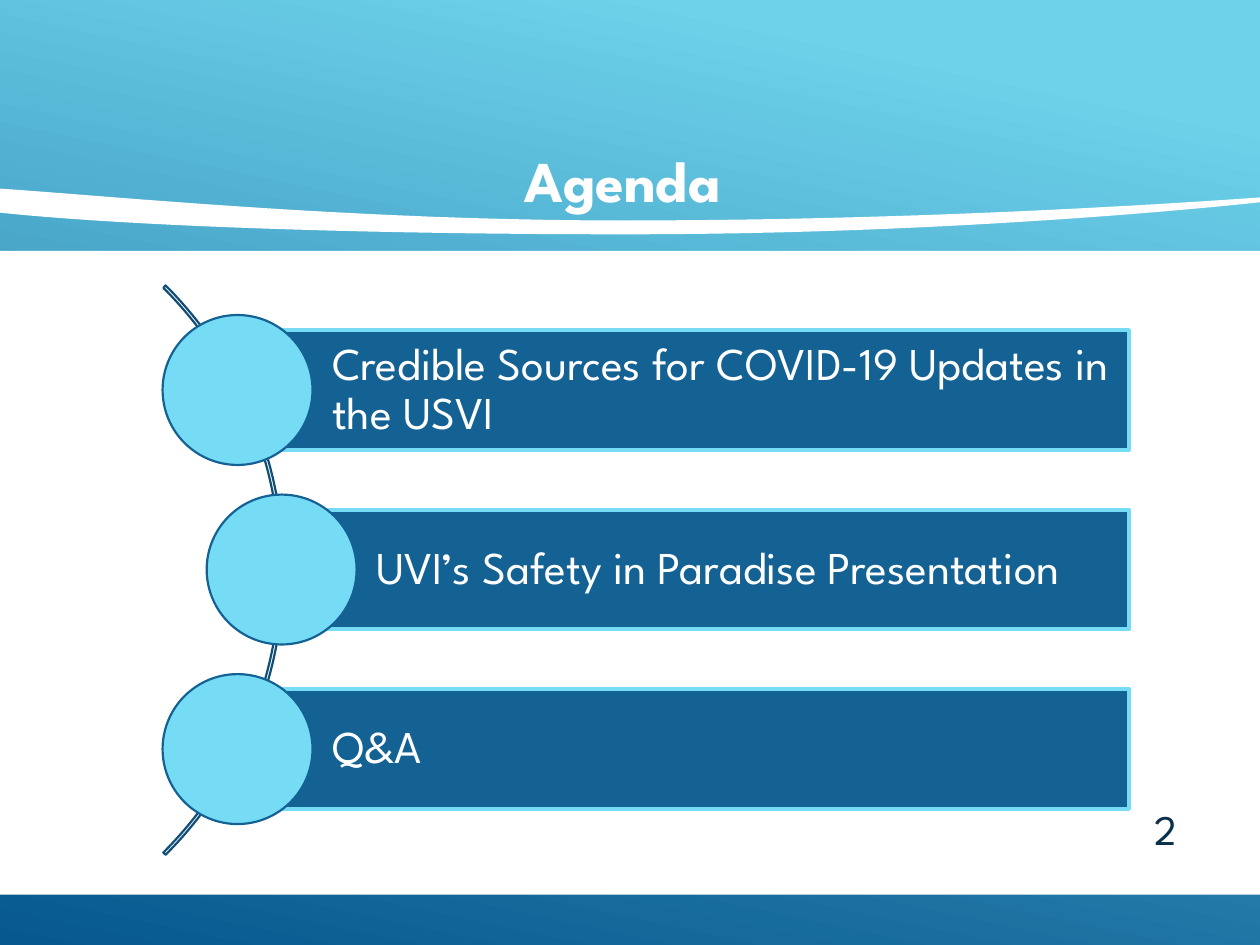
from dataclasses import dataclass

from pptx import Presentation
from pptx.dml.color import RGBColor
from pptx.enum.shapes import MSO_SHAPE
from pptx.enum.text import MSO_ANCHOR, PP_ALIGN
from pptx.util import Inches, Pt

FONT_NAME = "League Spartan"
WHITE, NAVY, BLUE, SKY = "FFFFFF", "0A304A", "146194", "76DBF4"
ARC_LINE = "104E77"

BAR_TOP, BAR_HEIGHT, BAR_RIGHT, BAR_STEP = 2.62, 0.95, 8.96, 1.425
CIRCLE_SIZE = 1.19
CURVE_STEPS = 30


@dataclass
class AgendaItem:
    text: str
    circle_left: float


AGENDA_ITEMS = [
    AgendaItem("Credible Sources for COVID-19 Updates in the USVI", 1.29),
    AgendaItem("UVI’s Safety in Paradise Presentation", 1.64),
    AgendaItem("Q&A", 1.29),
]

# Each segment: start, two control points, end
SWOOSH_SEGMENTS = [
    [(10.67, 1.52), (10.67, 1.51), (8.1, 1.75), (4.95, 1.75)],
    [(4.95, 1.75), (1.8, 1.75), (-0.74, 1.34), (-0.74, 1.52)],
    [(-0.74, 1.52), (-0.74, 1.71), (1.82, 1.86), (4.97, 1.86)],
    [(4.97, 1.86), (8.12, 1.86), (10.67, 1.54), (10.67, 1.52)],
]


def color(hex_value: str) -> RGBColor:
    return RGBColor.from_string(hex_value)


def style_shape(shape, fill: str | None = None, line: str | None = None, line_width: float = 1) -> None:
    shape.shadow.inherit = False
    if fill:
        shape.fill.solid()
        shape.fill.fore_color.rgb = color(fill)
    else:
        shape.fill.background()
    if line:
        shape.line.color.rgb = color(line)
        shape.line.width = Pt(line_width)
    else:
        shape.line.fill.background()


def add_preset(shapes, preset, left: float, top: float, width: float, height: float, **style):
    shape = shapes.add_shape(preset, Inches(left), Inches(top), Inches(width), Inches(height))
    style_shape(shape, **style)
    return shape


def write_text(shape, text: str, size: float, font_color: str, alignment,
               frame_format: dict, bold: bool = False, line_spacing: float = 1.0) -> None:
    frame = shape.text_frame
    for name, value in {"word_wrap": True, **frame_format}.items():
        setattr(frame, name, value)
    paragraph = frame.paragraphs[0]
    paragraph.text = text
    paragraph.alignment = alignment
    paragraph.line_spacing = line_spacing
    for name, value in {"name": FONT_NAME, "size": Pt(size), "bold": bold}.items():
        setattr(paragraph.font, name, value)
    paragraph.font.color.rgb = color(font_color)


def add_text_box(slide, left: float, top: float, width: float, height: float, *text_arguments, **text_format) -> None:
    box = slide.shapes.add_textbox(Inches(left), Inches(top), Inches(width), Inches(height))
    write_text(box, *text_arguments, **text_format)


def bezier_point(segment: list, t: float) -> tuple:
    weights = ((1 - t) ** 3, 3 * t * (1 - t) ** 2, 3 * t ** 2 * (1 - t), t ** 3)
    return tuple(Inches(sum(w * point[axis] for w, point in zip(weights, segment))) for axis in (0, 1))


def add_swoosh(slide) -> None:
    points = [bezier_point(segment, step / CURVE_STEPS)
              for segment in SWOOSH_SEGMENTS for step in range(CURVE_STEPS)]
    builder = slide.shapes.build_freeform(*points[0])
    builder.add_line_segments(points[1:], close=True)
    style_shape(builder.convert_to_shape(), fill=WHITE)


def add_agenda_item(shapes, item: AgendaItem, index: int) -> None:
    top = BAR_TOP + index * BAR_STEP
    bar_left = item.circle_left + CIRCLE_SIZE / 2
    bar = add_preset(shapes, MSO_SHAPE.RECTANGLE, bar_left, top, BAR_RIGHT - bar_left, BAR_HEIGHT,
                     fill=BLUE, line=SKY, line_width=2.25)
    margins = {f"margin_{side}": Inches(0.07) for side in ("top", "right", "bottom")}
    write_text(bar, item.text, 26, WHITE, PP_ALIGN.LEFT,
               {"vertical_anchor": MSO_ANCHOR.MIDDLE, "margin_left": Inches(0.75), **margins},
               line_spacing=0.9)
    circle_top = top + (BAR_HEIGHT - CIRCLE_SIZE) / 2
    add_preset(shapes, MSO_SHAPE.OVAL, item.circle_left, circle_top, CIRCLE_SIZE, CIRCLE_SIZE,
               fill=SKY, line=BLUE, line_width=1.25)


def main() -> None:
    presentation = Presentation()
    presentation.slide_width, presentation.slide_height = Inches(10), Inches(7.5)
    slide = presentation.slides.add_slide(presentation.slide_layouts[6])

    # Gradient background
    background = slide.background.fill
    background.gradient()
    background.gradient_angle = 360 - 102
    for stop, (position, hex_value) in zip(background.gradient_stops, [(0.1, "6ED2EB"), (1, "06588E")]):
        stop.position = position
        stop.color.rgb = color(hex_value)

    # White panel, title, swoosh and slide number
    add_preset(slide.shapes, MSO_SHAPE.RECTANGLE, -0.18, 1.99, 10.37, 5.11, fill=WHITE)
    add_text_box(slide, 2.27, 1.1, 5.34, 0.66, "Agenda", 33, WHITE, PP_ALIGN.CENTER,
                 {"vertical_anchor": MSO_ANCHOR.TOP}, bold=True)
    add_swoosh(slide)
    add_text_box(slide, 8.5, 6.1, 0.94, 0.73, "2", 24, NAVY, PP_ALIGN.RIGHT,
                 {"vertical_anchor": MSO_ANCHOR.BOTTOM})

    # Agenda list along an arc
    agenda = slide.shapes.add_group_shape().shapes
    arc = add_preset(agenda, MSO_SHAPE.BLOCK_ARC, -4.14, 1.33, 6.39, 6.39, line=ARC_LINE, line_width=1.25)
    for index, value in enumerate((189, 27, 0.004)):
        arc.adjustments[index] = value
    for index, item in enumerate(AGENDA_ITEMS):
        add_agenda_item(agenda, item, index)

    presentation.save("out.pptx")


if __name__ == "__main__":
    main()
